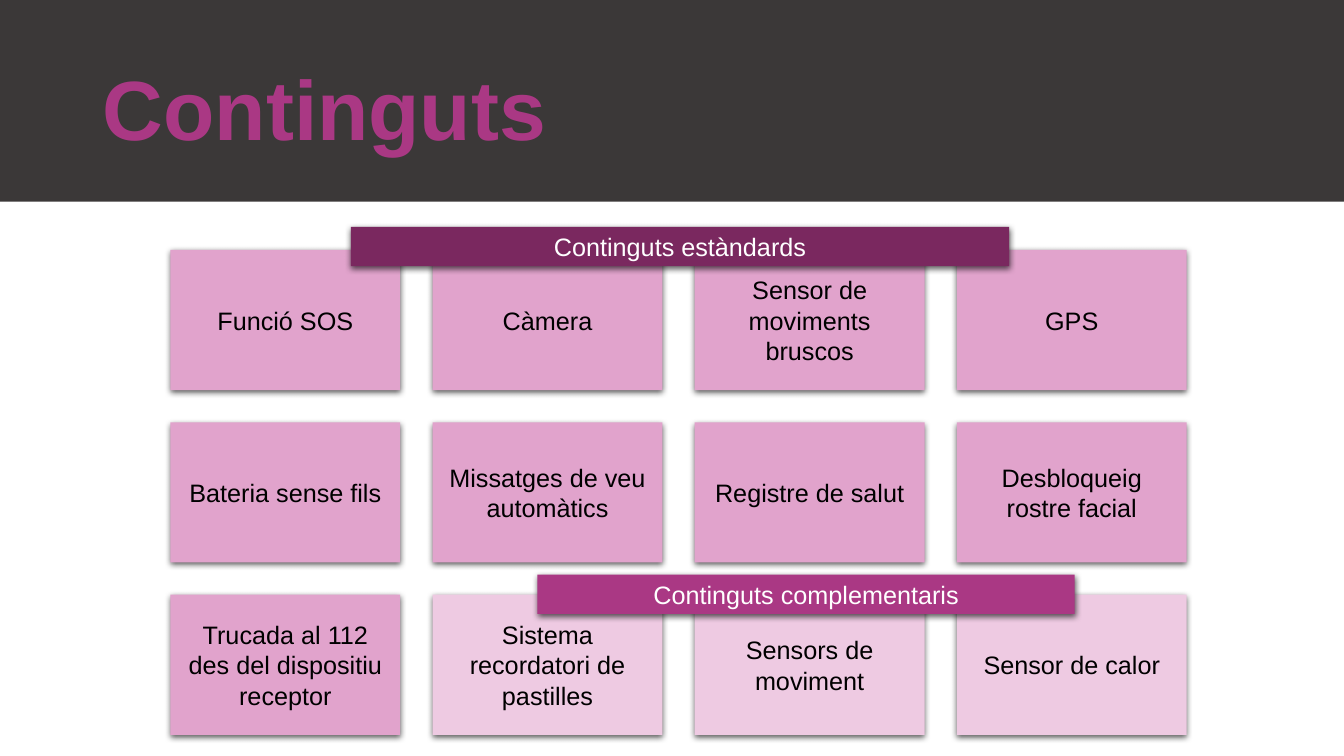
from lxml.etree import SubElement
from pptx import Presentation
from pptx.dml.color import RGBColor
from pptx.enum.shapes import MSO_SHAPE
from pptx.enum.text import MSO_ANCHOR, MSO_AUTO_SIZE, PP_ALIGN
from pptx.oxml.ns import qn
from pptx.util import Inches, Pt

THEME = {
    "font": "Arial", "title_size": 60, "label_size": 18,
    "band": "3B3838", "accent": "AA3884", "heading": "7A285F",
    "standard": "E1A3CC", "extra": "EECAE2",
    "dark": "000000", "light": "FFFFFF",
}
GRID = {"left": 1.69, "top": 2.48, "column": 2.6, "row": 1.71, "width": 2.28, "height": 1.39}
STANDARD_COUNT = 9
COLUMNS = 4
CONTENTS = [
    "Funció SOS", "Càmera", "Sensor de moviments bruscos", "GPS",
    "Bateria sense fils", "Missatges de veu automàtics", "Registre de salut",
    "Desbloqueig rostre facial",
    "Trucada al 112 des del dispositiu receptor", "Sistema recordatori de pastilles",
    "Sensors de moviment", "Sensor de calor",
]
HEADINGS = [
    ("Continguts estàndards", 3.48, 2.25, 6.53, "heading"),
    ("Continguts complementaris", 5.33, 5.7, 5.33, "accent"),
]


def write_text(shape, text, alignment, size, color, bold):
    frame = shape.text_frame
    frame.text = text
    paragraph = frame.paragraphs[0]
    frame_format = {"word_wrap": True, "auto_size": MSO_AUTO_SIZE.NONE,
                    "vertical_anchor": MSO_ANCHOR.MIDDLE}
    font_format = {"name": THEME["font"], "size": Pt(THEME[size]), "bold": bold}
    for target, values in ((frame, frame_format), (paragraph.runs[0].font, font_format)):
        for name, value in values.items():
            setattr(target, name, value)
    paragraph.alignment = alignment
    paragraph.runs[0].font.color.rgb = RGBColor.from_string(THEME[color])


def add_box(slide, left, top, width, height, fill):
    shape = slide.shapes.add_shape(
        MSO_SHAPE.RECTANGLE, Inches(left), Inches(top), Inches(width), Inches(height))
    shape.shadow.inherit = False
    shape.fill.solid()
    shape.fill.fore_color.rgb = RGBColor.from_string(THEME[fill])
    shape.line.fill.background()
    return shape


presentation = Presentation()
presentation.slide_width = Inches(13.33)
presentation.slide_height = Inches(7.5)
slide = presentation.slides.add_slide(presentation.slide_layouts[5])

title = slide.shapes.title
title_place = {"left": 0.92, "top": 0.4, "width": 11.5, "height": 1.45}
for name, value in title_place.items():
    setattr(title, name, Inches(value))
write_text(title, "Continguts", PP_ALIGN.LEFT, "title_size", "accent", True)
title.text_frame.paragraphs[0].line_spacing = 0.9

band = add_box(slide, 0, 0, 13.33, 2, "band")
title.element.addprevious(band.element)

boxes = []
for index, text in enumerate(CONTENTS):
    row, column = divmod(index, COLUMNS)
    left = GRID["left"] + column * GRID["column"]
    top = GRID["top"] + row * GRID["row"]
    fill = "standard" if index < STANDARD_COUNT else "extra"
    boxes.append((text, left, top, GRID["width"], GRID["height"], fill, "dark"))
for text, left, top, width, fill in HEADINGS:
    boxes.append((text, left, top, width, 0.39, fill, "light"))

for text, left, top, width, height, fill, color in boxes:
    box = add_box(slide, left, top, width, height, fill)
    write_text(box, text, PP_ALIGN.CENTER, "label_size", color, False)
    effects = box.element.spPr.find(qn("a:effectLst"))
    shadow = SubElement(effects, qn("a:outerShdw"), blurRad=str(Pt(4.5)), dist=str(Pt(1.5)),
                        dir="5400000", algn="ctr", rotWithShape="0")
    shade = SubElement(shadow, qn("a:srgbClr"), val=THEME["dark"])
    SubElement(shade, qn("a:alpha"), val="63000")

presentation.save("out.pptx")
